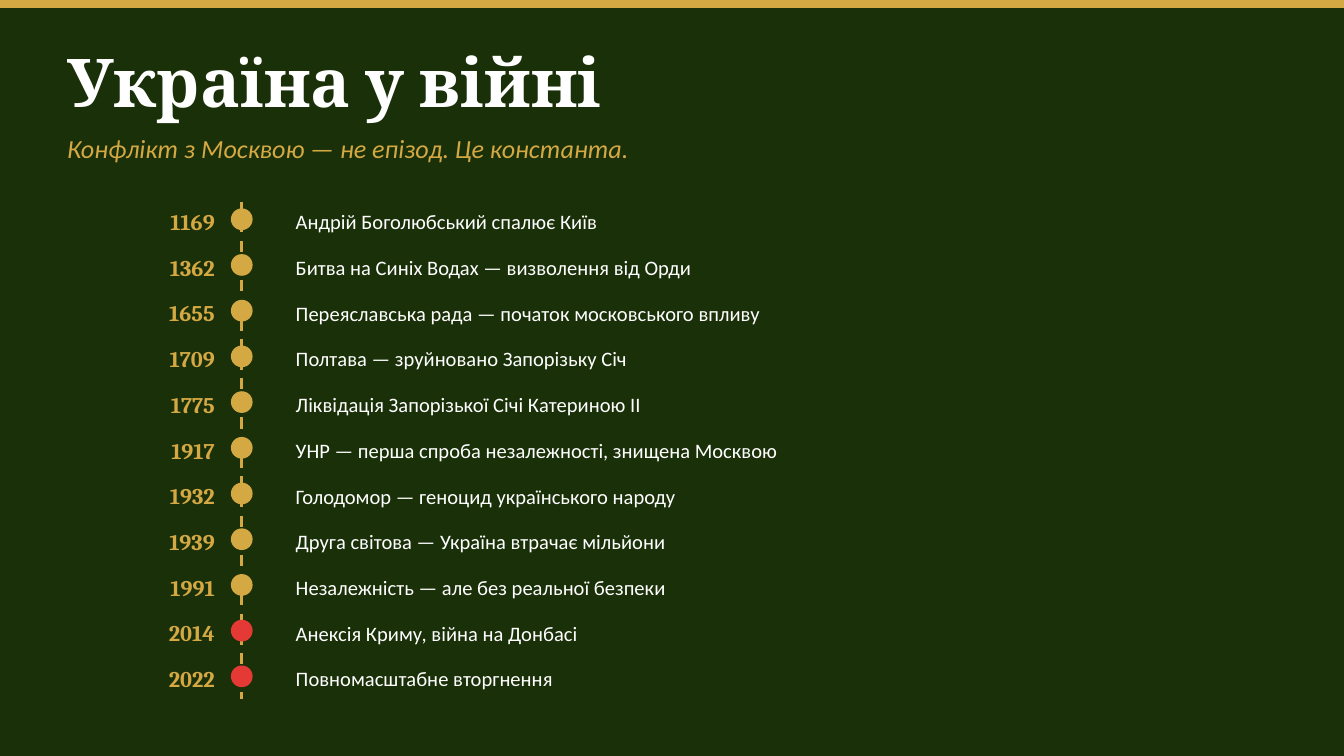
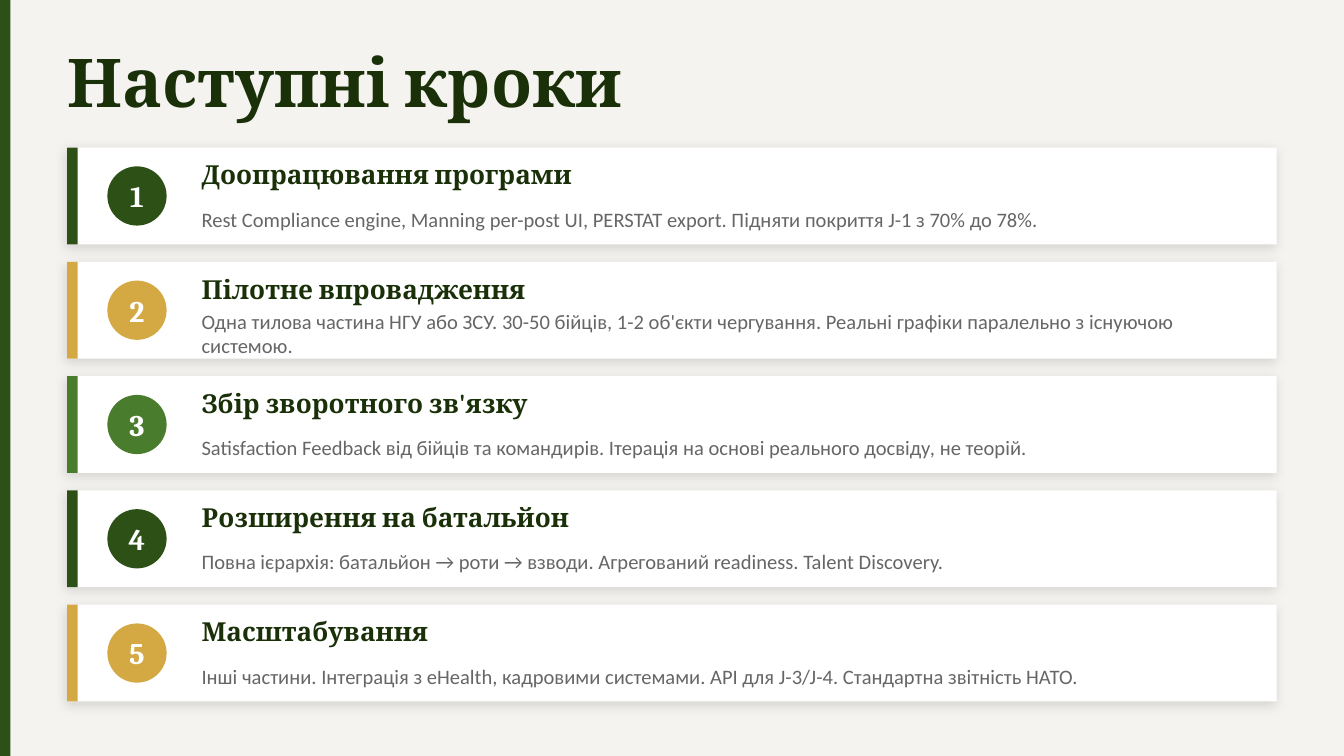
from lxml import etree
from pptx import Presentation
from pptx.dml.color import RGBColor
from pptx.enum import dml, shapes, text
from pptx.oxml import ns
from pptx.util import Cm, Pt

WIDTH, HEIGHT = 25.4, 14.29
MARGIN = 1.27
CONTENT = WIDTH - 2 * MARGIN
HEADING, BODY = "Cambria", "Calibri"
DARK, GREEN, LEAF = "1A3009", "2D5016", "4A7C2E"
GOLD, RED, WHITE, PAPER, GREY = "D4A843", "E53935", "FFFFFF", "F5F3EF", "666666"
RECT, OVAL = shapes.MSO_SHAPE.RECTANGLE, shapes.MSO_SHAPE.OVAL
LEFT, CENTER, RIGHT = text.PP_ALIGN.LEFT, text.PP_ALIGN.CENTER, text.PP_ALIGN.RIGHT

EVENTS = [
    ("1169", "Андрій Боголюбський спалює Київ", GOLD),
    ("1362", "Битва на Синіх Водах — визволення від Орди", GOLD),
    ("1655", "Переяславська рада — початок московського впливу", GOLD),
    ("1709", "Полтава — зруйновано Запорізьку Січ", GOLD),
    ("1775", "Ліквідація Запорізької Січі Катериною II", GOLD),
    ("1917", "УНР — перша спроба незалежності, знищена Москвою", GOLD),
    ("1932", "Голодомор — геноцид українського народу", GOLD),
    ("1939", "Друга світова — Україна втрачає мільйони", GOLD),
    ("1991", "Незалежність — але без реальної безпеки", GOLD),
    ("2014", "Анексія Криму, війна на Донбасі", RED),
    ("2022", "Повномасштабне вторгнення", RED),
]

STEPS = [
    ("Доопрацювання програми",
     "Rest Compliance engine, Manning per-post UI, PERSTAT export. "
     "Підняти покриття J-1 з 70% до 78%.", GREEN),
    ("Пілотне впровадження",
     "Одна тилова частина НГУ або ЗСУ. 30-50 бійців, 1-2 об'єкти чергування. "
     "Реальні графіки паралельно з існуючою системою.", GOLD),
    ("Збір зворотного зв'язку",
     "Satisfaction Feedback від бійців та командирів. "
     "Ітерація на основі реального досвіду, не теорій.", LEAF),
    ("Розширення на батальйон",
     "Повна ієрархія: батальйон → роти → взводи. "
     "Агрегований readiness. Talent Discovery.", GREEN),
    ("Масштабування",
     "Інші частини. Інтеграція з eHealth, кадровими системами. "
     "API для J-3/J-4. Стандартна звітність НАТО.", GOLD),
]


def color(value):
    return RGBColor.from_string(value)


def write(sp, words, size, fill, font=BODY, align=LEFT, bold=False, italic=False):
    tf = sp.text_frame
    tf.text = words
    tf.word_wrap = True
    tf.vertical_anchor = text.MSO_ANCHOR.MIDDLE
    tf.margin_left = tf.margin_top = tf.margin_right = tf.margin_bottom = 0
    p = tf.paragraphs[0]
    p.alignment = align
    r = p.runs[0]
    r.font.name, r.font.size = font, Pt(size)
    r.font.bold, r.font.italic = bold, italic
    r.font.color.rgb = color(fill)


def add_text(s, x, y, w, h, words, size, fill, **style):
    sp = s.shapes.add_textbox(Cm(x), Cm(y), Cm(w), Cm(h))
    write(sp, words, size, fill, **style)


def add_block(s, kind, x, y, w, h, fill):
    sp = s.shapes.add_shape(kind, Cm(x), Cm(y), Cm(w), Cm(h))
    sp.shadow.inherit = False
    sp.fill.solid()
    sp.fill.fore_color.rgb = color(fill)
    sp.line.fill.background()
    return sp


def add_shadow(sp):
    effects = sp._element.spPr.find(ns.qn("a:effectLst"))
    shadow = etree.SubElement(effects, ns.qn("a:outerShdw"), blurRad=str(Pt(6)),
                              dist=str(Pt(2)), dir=str(135 * 60000),
                              algn="bl", rotWithShape="0")
    tint = etree.SubElement(shadow, ns.qn("a:srgbClr"), val="000000")
    etree.SubElement(tint, ns.qn("a:alpha"), val="12000")


def add_slide(prs, title, background, title_color):
    s = prs.slides.add_slide(prs.slide_layouts[6])
    s.background.fill.solid()
    s.background.fill.fore_color.rgb = color(background)
    add_text(s, MARGIN, 0.76, CONTENT, 1.52, title, 36, title_color,
             font=HEADING, bold=True)
    return s


def add_axis(s, x, top, bottom):
    axis = s.shapes.add_connector(shapes.MSO_CONNECTOR.STRAIGHT,
                                  Cm(x), Cm(top), Cm(x), Cm(bottom))
    axis.line.color.rgb = color(GOLD)
    axis.line.width = Pt(1.5)
    axis.line.dash_style = dml.MSO_LINE.DASH
    etree.SubElement(axis._element.spPr, ns.qn("a:effectLst"))


def add_timeline(s, x, y, w, h):
    axis_x, row, dot = x + 3.81, 0.76, 0.41
    pitch = (h - row) / (len(EVENTS) - 1)
    add_axis(s, axis_x, y, y + h)
    for i, (year, event, fill) in enumerate(EVENTS):
        top = y + i * pitch
        add_block(s, OVAL, axis_x - dot / 2, top + 0.13, dot, dot, fill)
        add_text(s, x, top, 3.3, row, year, 12, GOLD,
                 font=HEADING, align=RIGHT, bold=True)
        add_text(s, x + 4.83, top, w - 4.83, row, event, 11, WHITE)


def add_step(s, x, y, w, h, number, heading, detail, fill):
    badge = 1.12
    add_shadow(add_block(s, RECT, x, y, w, h, WHITE))
    add_block(s, RECT, x, y, 0.2, h, fill)
    sp = add_block(s, OVAL, x + 0.76, y + (h - badge) / 2, badge, badge, fill)
    write(sp, str(number), 16, WHITE, font=HEADING, align=CENTER, bold=True)
    add_text(s, x + 2.54, y + 0.15, w - 3.81, 0.71, heading, 14, DARK,
             font=HEADING, bold=True)
    add_text(s, x + 2.54, y + 0.97, w - 3.81, 0.76, detail, 11, GREY)


def add_steps(s, x, y, w, h, gap=0.33):
    card = (h - gap * (len(STEPS) - 1)) / len(STEPS)
    for i, step in enumerate(STEPS):
        add_step(s, x, y + i * (card + gap), w, card, i + 1, *step)


def build_history(prs):
    s = add_slide(prs, "Україна у війні", DARK, WHITE)
    add_block(s, RECT, 0, 0, WIDTH, 0.15, GOLD)
    add_text(s, MARGIN, 2.29, 20.32, 1.02,
             "Конфлікт з Москвою — не епізод. Це константа.", 14, GOLD, italic=True)
    add_timeline(s, 0.76, 3.81, 23.11, 9.4)


def build_next_steps(prs):
    s = add_slide(prs, "Наступні кроки", PAPER, DARK)
    add_block(s, RECT, 0, 0, 0.2, HEIGHT, GREEN)
    add_steps(s, MARGIN, 2.79, CONTENT, 10.47)


def main():
    prs = Presentation()
    prs.slide_width, prs.slide_height = Cm(WIDTH), Cm(HEIGHT)
    build_history(prs)
    build_next_steps(prs)
    prs.save("out.pptx")


if __name__ == "__main__":
    main()
